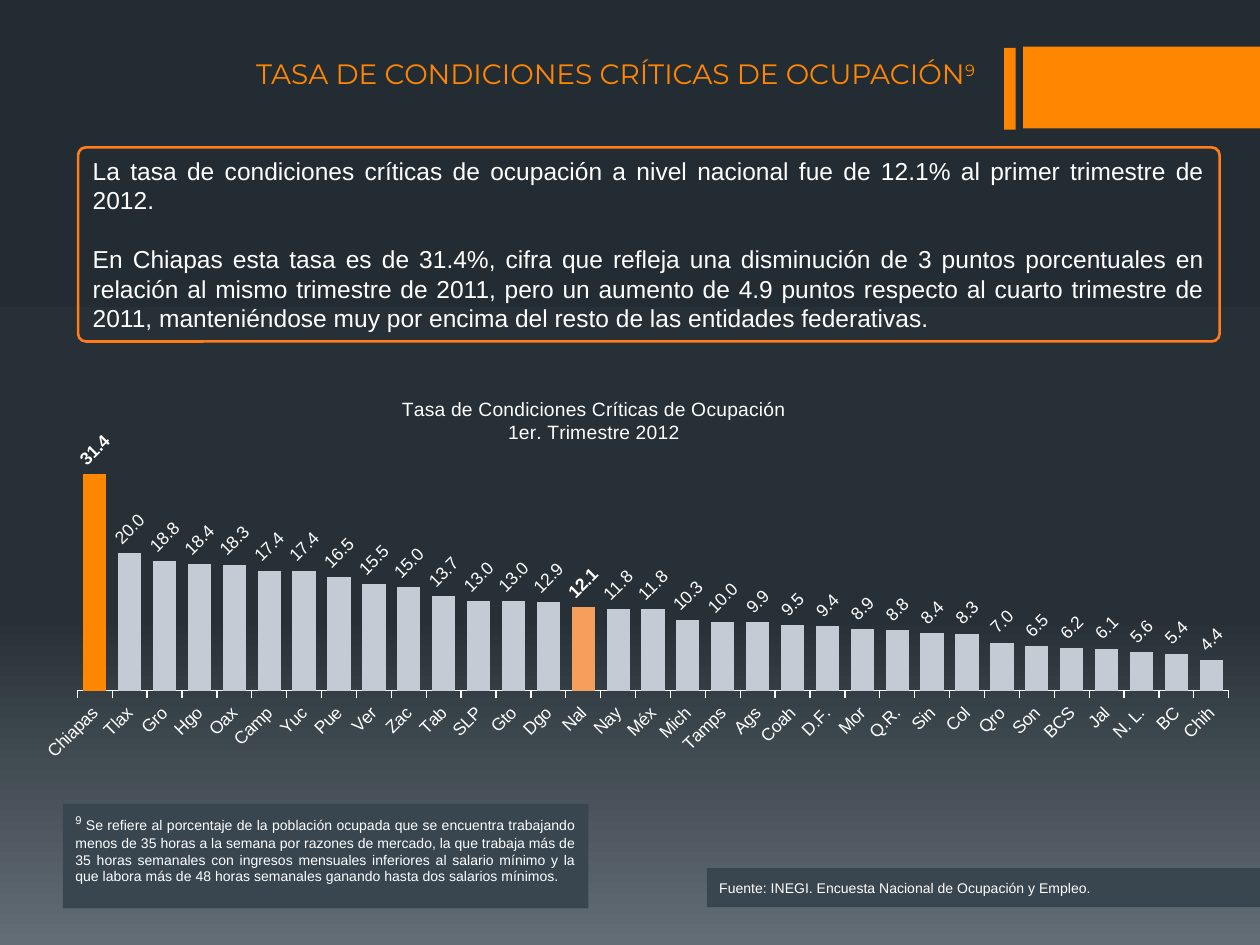
from lxml import etree
from pptx import Presentation
from pptx.chart.data import CategoryChartData as ChartData
from pptx.dml.color import RGBColor as RGB
from pptx.enum.chart import XL_CHART_TYPE as Kind, XL_LABEL_POSITION as Spot, XL_TICK_MARK as Tick
from pptx.enum.shapes import MSO_SHAPE as Shape
from pptx.enum.text import MSO_ANCHOR as Anchor, PP_ALIGN as Align
from pptx.oxml import parse_xml
from pptx.oxml.ns import qn
from pptx.util import Inches, Pt

HUES = {"orange": "FF8600", "edge": "FF7C19", "peach": "F69E5C", "bar": "C3CCD4",
        "white": "FFFFFF", "panel": "394650", "dark": "242C33", "mid": "273037", "light": "636D76"}


def add_box(kind, left, top, width, height, fill=None):
    box = slide.shapes.add_shape(kind, Inches(left), Inches(top), Inches(width), Inches(height))
    box.shadow.inherit = False
    box.line.fill.background()
    if fill:
        box.fill.solid()
        box.fill.fore_color.rgb = RGB.from_string(HUES[fill])
    else:
        box.fill.background()
    box.text_frame.word_wrap = True
    return box


def add_run(para, text, size, face="Arial", hue="white", base=0):
    run = para.add_run()
    run.text = text
    run.font.size = Pt(size)
    run.font.name = face
    run.font.color.rgb = RGB.from_string(HUES[hue])
    if base:
        run.font._element.set("baseline", str(base * 1000))


deck = Presentation()
deck.slide_width, deck.slide_height = Inches(10), Inches(7.5)
slide = deck.slides.add_slide(deck.slide_layouts[6])

back = slide.background.fill
back.gradient()
back.gradient_angle = 270
stops = slide._element.find(".//" + qn("a:gsLst"))
for stop in list(stops):
    stops.remove(stop)
for place, hue in ((0, "dark"), (65, "mid"), (100, "light")):
    stop = etree.SubElement(stops, qn("a:gs"), pos=str(place * 1000))
    etree.SubElement(stop, qn("a:srgbClr"), val=HUES[hue])

add_box(Shape.RECTANGLE, 7.97, 0.38, 0.09, 0.65, "orange")
add_box(Shape.RECTANGLE, 8.12, 0.37, 1.88, 0.65, "orange")

intro = add_box(Shape.ROUNDED_RECTANGLE, 0.62, 1.17, 9.06, 1.54)
intro.adjustments[0] = 0.04
intro.line.color.rgb = RGB.from_string(HUES["edge"])
intro.line.width = Pt(1.5)
frame = intro.text_frame
frame.vertical_anchor = Anchor.TOP
para = frame.paragraphs[0]
para.alignment = Align.JUSTIFY
add_run(para, "La tasa de condiciones críticas de ocupación a nivel nacional fue de 12.1% al primer trimestre de 2012.", 14)
para = frame.add_paragraph()
para.alignment = Align.JUSTIFY
para.space_before = Pt(17)
add_run(para, "En Chiapas esta tasa es de 31.4%, cifra que refleja una disminución de 3 puntos porcentuales en relación al mismo trimestre de 2011, pero un aumento de 4.9 puntos respecto al cuarto trimestre de 2011, manteniéndose muy por encima del resto de las entidades federativas.", 14)

rates = {
    "Chiapas": 31.4, "Tlax": 20, "Gro": 18.8, "Hgo": 18.4, "Oax": 18.3, "Camp": 17.4, "Yuc": 17.4,
    "Pue": 16.5, "Ver": 15.5, "Zac": 15, "Tab": 13.7, "SLP": 13, "Gto": 13, "Dgo": 12.9, "Nal": 12.1,
    "Nay": 11.8, "Méx": 11.8, "Mich": 10.3, "Tamps": 10, "Ags": 9.9, "Coah": 9.5, "D.F.": 9.4,
    "Mor": 8.9, "Q.R.": 8.8, "Sin": 8.4, "Col": 8.3, "Qro": 7, "Son": 6.5, "BCS": 6.2, "Jal": 6.1,
    "N. L.": 5.6, "BC": 5.4, "Chih": 4.4}
data = ChartData(number_format="0.0")
data.categories = list(rates)
data.add_series("Tasa", list(rates.values()))
chart = slide.shapes.add_chart(Kind.COLUMN_CLUSTERED, Inches(0.31), Inches(2.91),
                               Inches(9.5), Inches(3.4), data).chart
chart.has_legend = False
chart.font.size = Pt(10)
chart.font.name = "Arial"
chart.font.color.rgb = RGB.from_string(HUES["white"])

chart.has_title = True
title = chart.chart_title
title.include_in_layout = False
lines = ("Tasa de Condiciones Críticas de Ocupación", "1er. Trimestre 2012")
for num, line in enumerate(lines):
    para = title.text_frame.add_paragraph() if num else title.text_frame.paragraphs[0]
    para.alignment = Align.CENTER
    para.font.bold = False
    add_run(para, line, 11)
    para.runs[0].font.bold = False

axis = chart.value_axis
axis.minimum_scale, axis.maximum_scale = 0, 35
axis.has_major_gridlines = False
axis.visible = False
axis = chart.category_axis
axis.major_tick_mark = Tick.OUTSIDE
axis.format.line.color.rgb = RGB.from_string(HUES["white"])
axis.tick_labels.font.size = Pt(10)
axis._element.find(".//" + qn("a:bodyPr")).set("rot", "-2700000")

plot = chart.plots[0]
plot.gap_width = 50
plot.vary_by_categories = False
bars = plot.series[0]
bars.format.fill.solid()
bars.format.fill.fore_color.rgb = RGB.from_string(HUES["bar"])
labels = bars.data_labels
labels.show_value = True
labels.number_format = "0.0"
labels.number_format_is_linked = False
labels.position = Spot.OUTSIDE_END
labels.font.size = Pt(10)
labels.font.color.rgb = RGB.from_string(HUES["white"])
labels._element.find(".//" + qn("a:bodyPr")).set("rot", "-2700000")
for num, hue in ((0, "orange"), (14, "peach")):
    point = bars.points[num]
    point.format.fill.solid()
    point.format.fill.fore_color.rgb = RGB.from_string(HUES[hue])
    label = point.data_label
    label.font.bold = True
    label.font.size = Pt(10)
    label.font.color.rgb = RGB.from_string(HUES["white"])
    label.position = Spot.OUTSIDE_END
    label._dLbl.find(".//" + qn("a:bodyPr")).set("rot", "-2700000")

SPACE = "http://schemas.openxmlformats.org/drawingml/2006/chart"
area = chart._chartSpace.find(".//" + qn("c:plotArea"))
head = title._element
for owner, spot, values in ((area, 0, {"layoutTarget": "inner", "xMode": "edge", "yMode": "edge",
                                       "x": 0.032, "y": 0.193, "w": 0.962, "h": 0.564}),
                            (head, 1, {"xMode": "edge", "yMode": "edge", "x": 0.3, "y": 0.06})):
    for old in owner.findall(qn("c:layout")):
        owner.remove(old)
    parts = "".join(f'<c:{name} val="{value}"/>' for name, value in values.items())
    owner.insert(spot, parse_xml(
        f'<c:layout xmlns:c="{SPACE}"><c:manualLayout>{parts}</c:manualLayout></c:layout>'))

name = slide.shapes.add_textbox(Inches(1.84), Inches(0.4), Inches(6.09), Inches(0.64))
name.text_frame.word_wrap = True
para = name.text_frame.paragraphs[0]
para.alignment = Align.CENTER
add_run(para, "TASA DE CONDICIONES CRÍTICAS DE OCUPACIÓN", 16, "Montserrat", "orange")
add_run(para, "9", 16, "Montserrat", "orange", 30)

source = add_box(Shape.RECTANGLE, 5.61, 6.89, 4.39, 0.31, "panel")
source.text_frame.vertical_anchor = Anchor.MIDDLE
para = source.text_frame.paragraphs[0]
para.alignment = Align.JUSTIFY
add_run(para, "Fuente: INEGI. Encuesta Nacional de Ocupación y Empleo.", 8)

note = add_box(Shape.RECTANGLE, 0.5, 6.38, 4.17, 0.83, "panel")
note.text_frame.vertical_anchor = Anchor.MIDDLE
note.text_frame.margin_bottom = Inches(0.18)
para = note.text_frame.paragraphs[0]
para.alignment = Align.JUSTIFY
add_run(para, "9", 11, base=30)
add_run(para, " Se refiere al porcentaje de la población ocupada que se encuentra trabajando menos de 35 horas a la semana por razones de mercado, la que trabaja más de 35 horas semanales con ingresos mensuales inferiores al salario mínimo y la que labora más de 48 horas semanales ganando hasta dos salarios mínimos.", 8)

deck.save("out.pptx")
